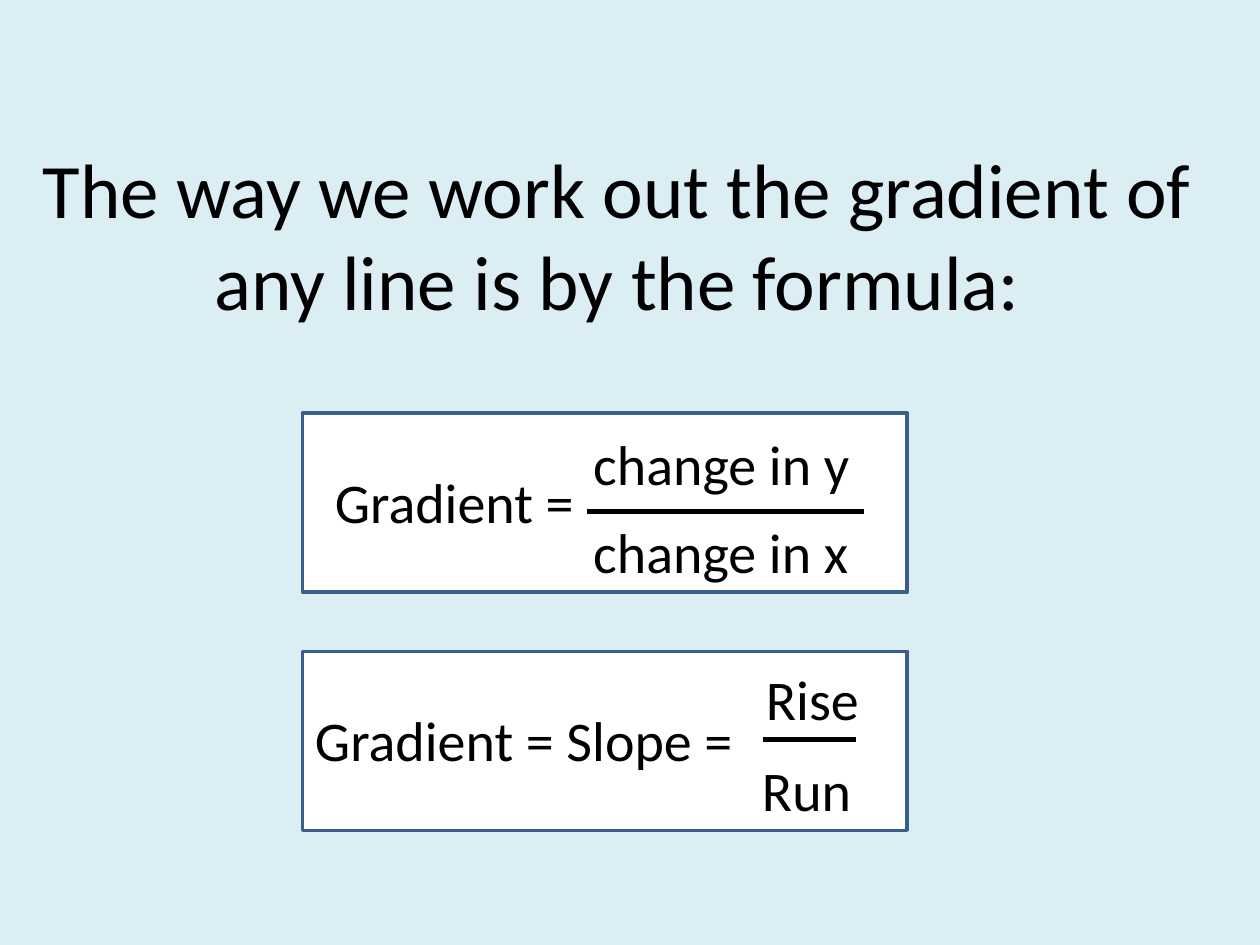
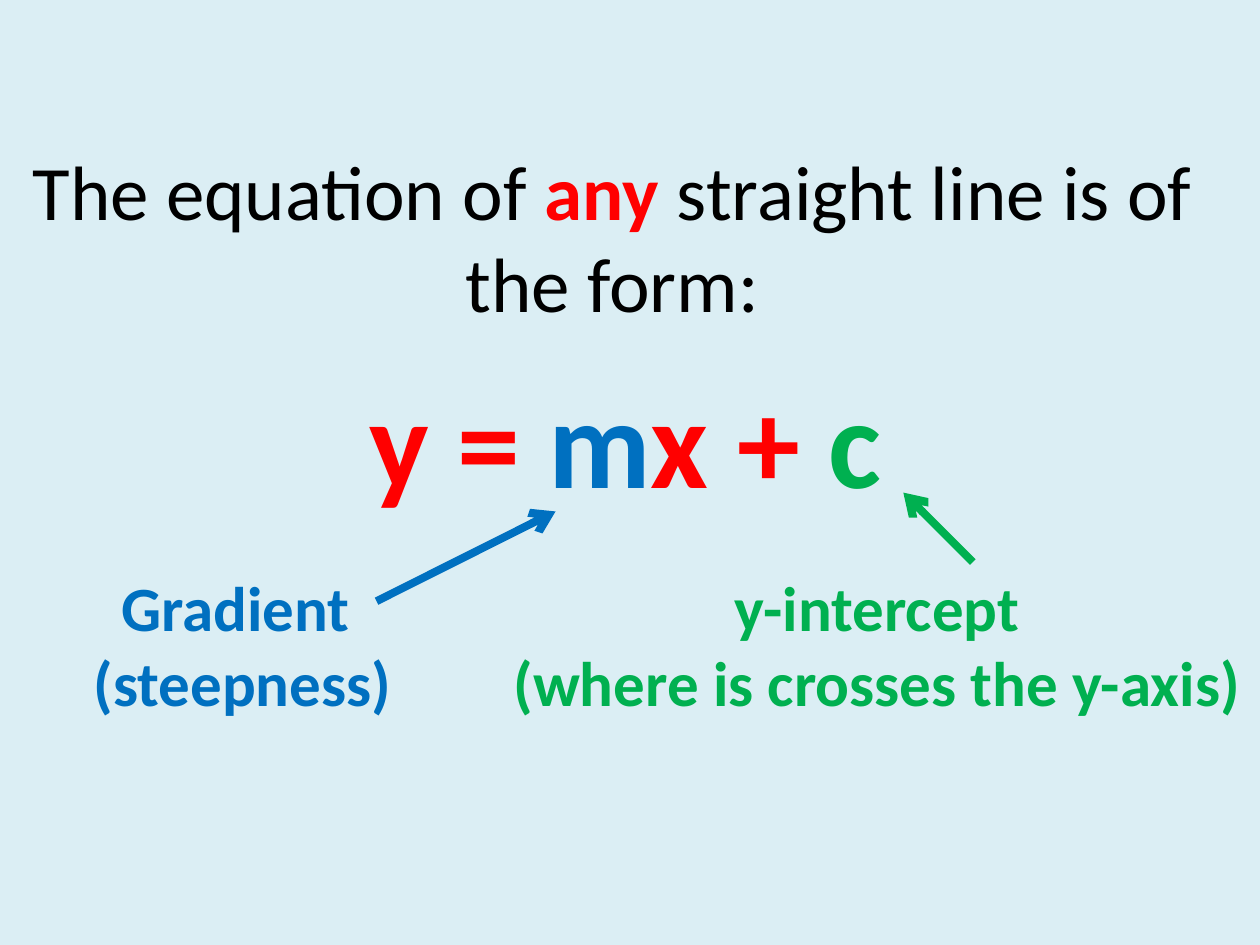
from dataclasses import dataclass
from typing import Any

from lxml.etree import SubElement
from pptx import Presentation
from pptx.dml.color import RGBColor
from pptx.enum.shapes import MSO_CONNECTOR, MSO_SHAPE
from pptx.enum.text import PP_ALIGN
from pptx.oxml.ns import qn
from pptx.util import Cm, Pt

# Shared look
FONT = "Calibri"
BACKGROUND, PANEL_FILL, PANEL_LINE = "DBEEF4", "FFFFFF", "3A5F8C"
BLACK, RED, BLUE, GREEN = "000000", "FF0000", "0070C0", "00B050"
TITLE_WIDTH, TITLE_HEIGHT = 24.69, 4.01
PANEL_LEFT, PANEL_WIDTH, PANEL_HEIGHT = 6.1, 12.19, 3.61
TERM_HEIGHT, TERM_SIZE = 1.63, 32
LABEL_TOP, LABEL_HEIGHT, LABEL_SIZE = 11.33, 3.33, 36


@dataclass(frozen=True)
class Span:
    text: str
    colour: str = BLACK
    bold: bool = False


@dataclass(frozen=True)
class Term:
    """A piece of a formula; top is measured from the panel's top."""
    text: str
    left: float
    top: float
    width: float


@dataclass(frozen=True)
class Formula:
    top: float
    terms: tuple[Term, ...]
    bar_left: float
    bar_right: float
    bar_top: float


@dataclass(frozen=True)
class Label:
    lines: tuple[str, ...]
    colour: str
    left: float
    width: float
    arrow_start: tuple[float, float]
    arrow_end: tuple[float, float]


FORMULAS = (
    Formula(8.33, (Term("change in y", 11.71, 0.2, 5.74),
                   Term("change in x", 11.71, 1.98, 5.72),
                   Term("Gradient =", 6.5, 0.97, 5.64)), 11.84, 17.42, 1.98),
    Formula(13.13, (Term("Rise", 15.19, 0.15, 2.67),
                    Term("Run", 15.11, 1.98, 2.59),
                    Term("Gradient = Slope =", 6.1, 0.97, 9.3)), 15.39, 17.25, 1.78),
)
LABELS = (
    Label(("Gradient ", "(steepness)"), BLUE, 1.6, 6.58, (7.59, 12.12), (11.2, 10.31)),
    Label(("y-intercept", "(where is crosses the y-axis)"), GREEN, 10.01, 15.34,
          (19.61, 11.33), (18.21, 9.93)),
)


def rgb(colour: str) -> RGBColor:
    return RGBColor.from_string(colour)


def add_page(deck: Any) -> Any:
    page = deck.slides.add_slide(deck.slide_layouts[6])
    page.background.fill.solid()
    page.background.fill.fore_color.rgb = rgb(BACKGROUND)
    return page


def add_text(shapes: Any, lines: list[list[Span]], left: float, top: float, width: float,
             height: float, size: float, align: Any = PP_ALIGN.LEFT, wrap: bool = False) -> None:
    """Draw one paragraph per line, each made of formatted spans."""
    box = shapes.add_textbox(Cm(left), Cm(top), Cm(width), Cm(height))
    frame = box.text_frame
    frame.word_wrap = wrap
    frame.text = "\n".join("" for _ in lines)
    for para, spans in zip(frame.paragraphs, lines):
        para.alignment = align
        for span in spans:
            run = para.add_run()
            run.text = span.text
            run.font.name, run.font.size = FONT, Pt(size)
            run.font.bold = span.bold
            run.font.color.rgb = rgb(span.colour)


def add_title(page: Any, spans: list[Span], left: float, top: float) -> None:
    add_text(page.shapes, [spans], left, top, TITLE_WIDTH, TITLE_HEIGHT, 44,
             PP_ALIGN.CENTER, wrap=True)


def add_line(shapes: Any, start: tuple[float, float], end: tuple[float, float],
             colour: str, width: float, arrow: bool = False) -> None:
    line = shapes.add_connector(MSO_CONNECTOR.STRAIGHT, Cm(start[0]), Cm(start[1]),
                                Cm(end[0]), Cm(end[1]))
    line.line.color.rgb = rgb(colour)
    line.line.width = Pt(width)
    properties = line.element.spPr
    if arrow:
        SubElement(properties.find(qn("a:ln")), qn("a:tailEnd"), type="arrow")
    SubElement(properties, qn("a:effectLst"))


def add_formula(page: Any, formula: Formula) -> None:
    """Draw a panel with a fraction, kept together as a group."""
    shapes = page.shapes.add_group_shape().shapes
    panel = shapes.add_shape(MSO_SHAPE.RECTANGLE, Cm(PANEL_LEFT), Cm(formula.top),
                             Cm(PANEL_WIDTH), Cm(PANEL_HEIGHT))
    panel.shadow.inherit = False
    panel.fill.solid()
    panel.fill.fore_color.rgb = rgb(PANEL_FILL)
    panel.line.color.rgb = rgb(PANEL_LINE)
    panel.line.width = Pt(2)
    for term in formula.terms:
        add_text(shapes, [[Span(term.text)]], term.left, formula.top + term.top,
                 term.width, TERM_HEIGHT, TERM_SIZE)
    bar_top = formula.top + formula.bar_top
    add_line(shapes, (formula.bar_left, bar_top), (formula.bar_right, bar_top), BLACK, 3)


def add_label(page: Any, label: Label) -> None:
    lines = [[Span(text, label.colour, True)] for text in label.lines]
    add_text(page.shapes, lines, label.left, LABEL_TOP, label.width, LABEL_HEIGHT,
             LABEL_SIZE, PP_ALIGN.CENTER)
    add_line(page.shapes, label.arrow_start, label.arrow_end, label.colour, 4.5, arrow=True)


def build_gradient_page(deck: Any) -> None:
    page = add_page(deck)
    add_title(page, [Span("The way we work out the gradient of any line is by the formula:")],
              0.1, 2.72)
    for formula in FORMULAS:
        add_formula(page, formula)


def build_equation_page(deck: Any) -> None:
    page = add_page(deck)
    equation = [Span("y = ", RED, True), Span("m", BLUE, True),
                Span("x + ", RED, True), Span("c", GREEN, True)]
    add_text(page.shapes, [equation], 7.19, 7.19, 10.92, 3.33, 72)
    add_title(page, [Span("The equation of "), Span("any", RED, True),
                     Span(" straight line is of the form:")], 0, 2.77)
    for label in LABELS:
        add_label(page, label)


def main() -> None:
    deck = Presentation()
    deck.slide_width, deck.slide_height = Cm(25.4), Cm(19.05)
    build_gradient_page(deck)
    build_equation_page(deck)
    deck.save("out.pptx")


if __name__ == "__main__":
    main()
